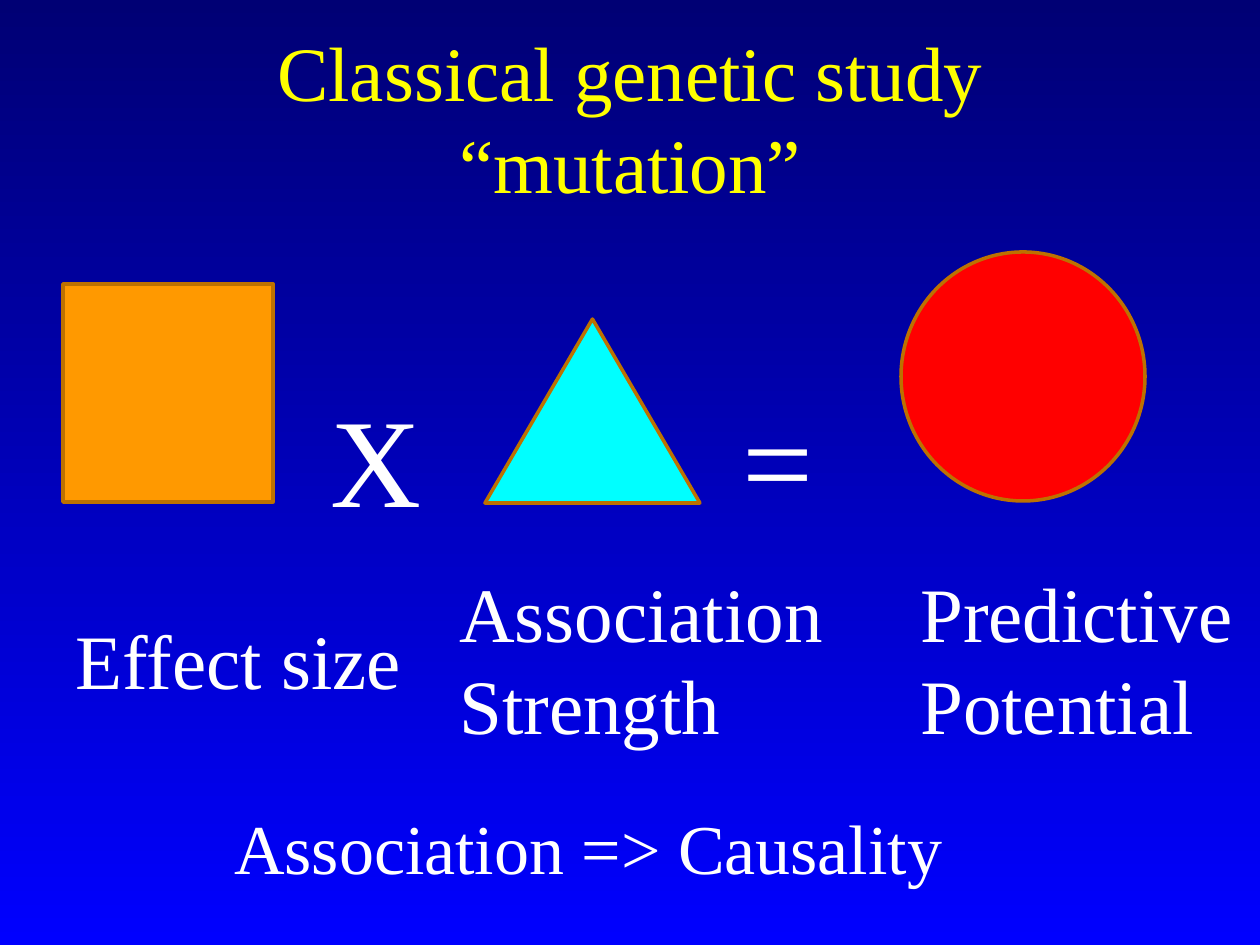
from dataclasses import dataclass

from pptx import Presentation
from pptx.dml.color import RGBColor
from pptx.enum.shapes import MSO_SHAPE as Preset
from pptx.enum.text import MSO_ANCHOR as Anchor, MSO_AUTO_SIZE as AutoSize, PP_ALIGN as Align
from pptx.util import Emu, Pt

PX_PER_INCH = 126


@dataclass(frozen=True)
class Theme:
    font: str = "Times New Roman"
    background_top: str = "000074"
    background_bottom: str = "0000FF"
    title: str = "FFFF00"
    text: str = "FFFFFF"
    effect: str = "FF9900"
    association: str = "00FFFF"
    potential: str = "FF0000"
    outline: str = "BD7100"
    outline_width: int = 2
    heading_size: int = 44
    conclusion_size: int = 40
    operator_size: int = 72


THEME = Theme()


def px(length):
    return Emu(round(length * 914400 / PX_PER_INCH))


def rgb(color):
    return RGBColor.from_string(color)


def add_run(paragraph, text, size, color):
    run = paragraph.add_run()
    run.text = text
    run.font.name = THEME.font
    run.font.size = Pt(size)
    run.font.color.rgb = rgb(color)


def paint_background(slide):
    fill = slide.background.fill
    fill.gradient()
    fill.gradient_angle = 270
    colors = (THEME.background_top, THEME.background_bottom)
    for stop, position, color in zip(fill.gradient_stops, (0, 1), colors):
        stop.position = position
        stop.color.rgb = rgb(color)


def set_title(slide, lines, box):
    title = slide.shapes.title
    title.left, title.top, title.width, title.height = map(px, box)
    frame = title.text_frame
    frame.auto_size = AutoSize.NONE
    frame.word_wrap = True
    frame.vertical_anchor = Anchor.MIDDLE
    # The deep bottom inset lifts the two lines above the box centre
    frame.margin_top, frame.margin_bottom = px(6), px(98)
    paragraph = frame.paragraphs[0]
    paragraph.alignment = Align.CENTER
    paragraph.line_spacing = 1.0
    paragraph.space_before = Pt(0)
    for index, line in enumerate(lines):
        if index:
            paragraph.add_line_break()
        add_run(paragraph, line, THEME.heading_size, THEME.title)


def add_symbol(slide, preset, box, color):
    symbol = slide.shapes.add_shape(preset, *map(px, box))
    symbol.shadow.inherit = False
    symbol.fill.solid()
    symbol.fill.fore_color.rgb = rgb(color)
    symbol.line.color.rgb = rgb(THEME.outline)
    symbol.line.width = Pt(THEME.outline_width)


def add_label(slide, lines, box, size):
    frame = slide.shapes.add_textbox(*map(px, box)).text_frame
    frame.word_wrap = False
    frame.auto_size = AutoSize.SHAPE_TO_FIT_TEXT
    for index, line in enumerate(lines):
        paragraph = frame.add_paragraph() if index else frame.paragraphs[0]
        paragraph.alignment = Align.LEFT
        add_run(paragraph, line, size, THEME.text)


def main():
    deck = Presentation()
    deck.slide_width, deck.slide_height = px(1260), px(945)
    slide = deck.slides.add_slide(deck.slide_layouts[5])
    paint_background(slide)
    set_title(slide, ["Classical genetic study", "“mutation”"], (95, 84, 1071, 158))

    # Factors and product of the equation
    add_symbol(slide, Preset.RECTANGLE, (63, 284, 210, 218), THEME.effect)
    add_symbol(slide, Preset.ISOSCELES_TRIANGLE, (485, 319, 215, 184), THEME.association)
    add_symbol(slide, Preset.OVAL, (901, 252, 244, 249), THEME.potential)

    # Operators between the symbols
    add_label(slide, ["X"], (318, 375, 127, 165), THEME.operator_size)
    add_label(slide, ["="], (730, 375, 106, 165), THEME.operator_size)

    # Captions under the symbols
    add_label(slide, ["Effect size"], (63, 606, 386, 106), THEME.heading_size)
    add_label(slide, ["Association", "Strength"], (447, 559, 393, 199), THEME.heading_size)
    add_label(slide, ["Predictive", "Potential"], (908, 559, 340, 199), THEME.heading_size)

    # Conclusion
    add_label(slide, ["Association => Causality"], (222, 798, 741, 97), THEME.conclusion_size)

    deck.save("out.pptx")


if __name__ == "__main__":
    main()
